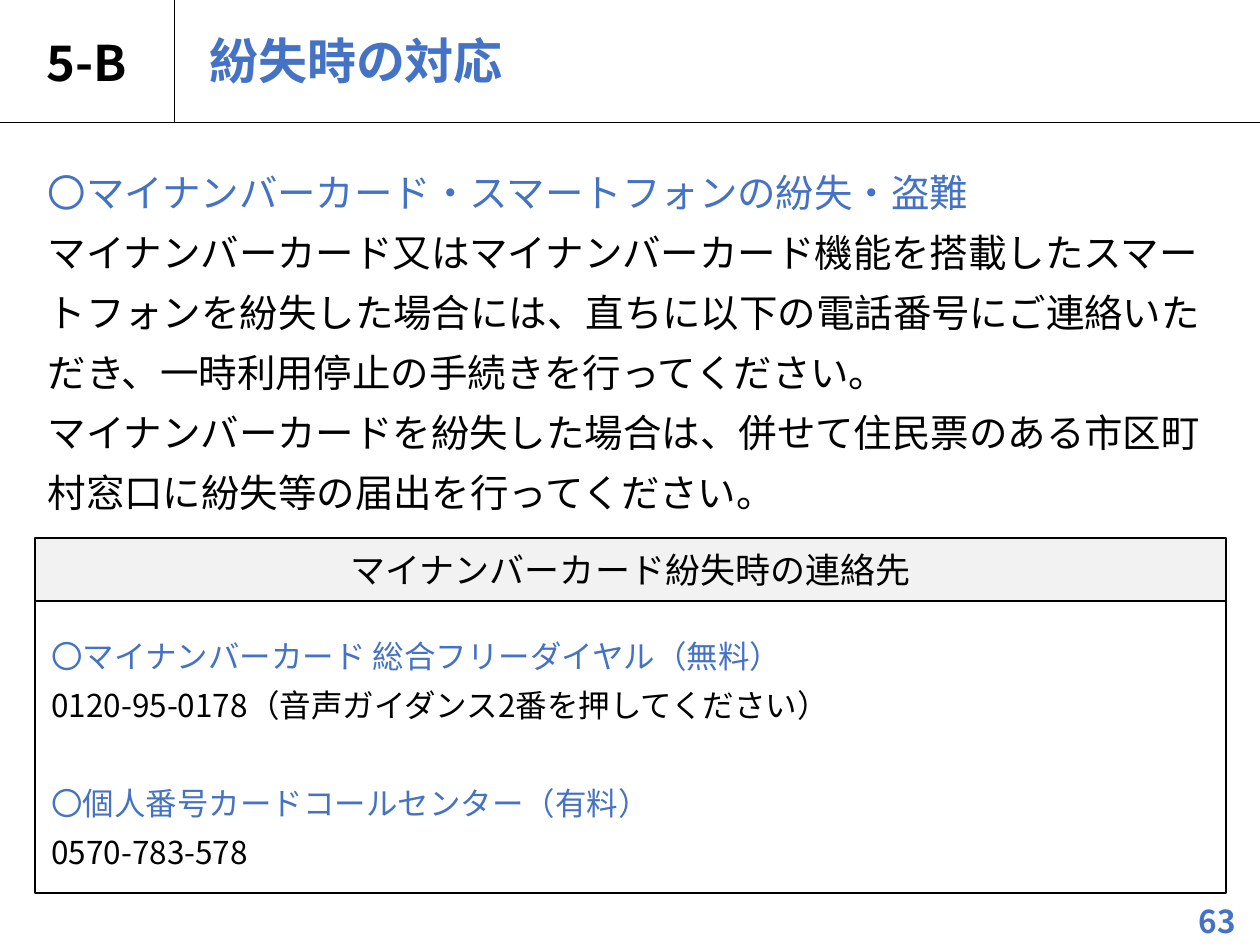
"""Build the slide on what to do when a card is lost."""
import pptx
import pptx.util
import pptx.dml.color
import pptx.enum.shapes
import pptx.enum.text
import pptx.oxml
import pptx.oxml.ns

PX = 914400 // 126
theme = {
    "font": "Noto Sans CJK JP",
    "ink": "000000", "blue": "4472C4", "grey": "F2F2F2",
    "title": 28, "body": 22, "head": 20, "note": 18,
    "thin": 0.5, "edge": 1,
}
Pt = pptx.util.Pt
RGB = pptx.dml.color.RGBColor.from_string
Kind = pptx.enum.shapes.MSO_SHAPE
Align = pptx.enum.text.PP_ALIGN
Middle = pptx.enum.text.MSO_ANCHOR.MIDDLE
qn = pptx.oxml.ns.qn


def place(shape, box):
    shape.left, shape.top, shape.width, shape.height = [n * PX for n in box]


def write(frame, lines, size, align=Align.LEFT, bold=False, pitch=None):
    frame.word_wrap = True
    frame.auto_size = pptx.enum.text.MSO_AUTO_SIZE.NONE
    frame.text = "\n".join(text for text, tint in lines)
    for para, (text, tint) in zip(frame.paragraphs, lines):
        props = para._p.get_or_add_pPr()
        props.set("marL", "0")
        props.set("indent", "0")
        props.append(pptx.oxml.parse_xml(
            '<a:buNone xmlns:a="%s"/>' % pptx.oxml.ns.nsdecls("a").split('"')[1]))
        para.alignment = align
        para.space_before = para.space_after = Pt(0)
        if pitch:
            para.line_spacing = Pt(pitch)
        for run in para.runs:
            font = run.font
            font.size, font.bold, font.name = Pt(size), bold, theme["font"]
            font.color.rgb = RGB(theme[tint])
            east = run._r.get_or_add_rPr().makeelement(
                qn("a:ea"), {"typeface": theme["font"]})
            run._r.rPr.find(qn("a:latin")).addnext(east)


deck = pptx.Presentation()
deck.slide_width, deck.slide_height = 1260 * PX, 945 * PX
slide = deck.slides.add_slide(deck.slide_layouts[1])
shapes = slide.shapes

for ends in [(-5, 122, 1260, 122), (174, 122, 174, 0)]:
    rule = shapes.add_connector(
        pptx.enum.shapes.MSO_CONNECTOR.STRAIGHT, *[n * PX for n in ends])
    rule.line.color.rgb = RGB(theme["ink"])
    rule.line.width = Pt(theme["thin"])
    rule._element.spPr.append(rule._element.makeelement(qn("a:effectLst"), {}))

code = shapes.title
place(code, (0, 0, 174, 123))
write(code.text_frame, [("5-B", "ink")], theme["title"], Align.CENTER, True)
code.text_frame.vertical_anchor = Middle

body = slide.placeholders[1]
place(body, (35, 149, 1191, 387))
write(body.text_frame, [
    ("〇マイナンバーカード・スマートフォンの紛失・盗難", "blue"),
    ("マイナンバーカード又はマイナンバーカード機能を搭載したスマートフォンを紛失した場合には、"
     "直ちに以下の電話番号にご連絡いただき、一時利用停止の手続きを行ってください。", "ink"),
    ("マイナンバーカードを紛失した場合は、併せて住民票のある市区町村窓口に"
     "紛失等の届出を行ってください。", "ink"),
], theme["body"], pitch=34.3)

panels = [
    (Kind.ROUNDED_RECTANGLE, (193, 20, 1032, 79), None, False,
     "紛失時の対応", "blue", "title", Align.LEFT, True),
    (Kind.RECTANGLE, (35, 538, 1191, 63), "grey", True,
     "マイナンバーカード紛失時の連絡先", "ink", "head", Align.CENTER, False),
    (Kind.RECTANGLE, (35, 601, 1191, 292), None, True,
     "", "ink", "note", Align.LEFT, False),
]
for kind, box, fill, edge, text, tint, size, align, bold in panels:
    panel = shapes.add_shape(kind, 0, 0, 0, 0)
    place(panel, box)
    panel.shadow.inherit = False
    if fill:
        panel.fill.solid()
        panel.fill.fore_color.rgb = RGB(theme[fill])
    else:
        panel.fill.background()
    if edge:
        panel.line.color.rgb = RGB(theme["ink"])
        panel.line.width = Pt(theme["edge"])
    else:
        panel.line.fill.background()
    if text:
        write(panel.text_frame, [(text, tint)], theme[size], align, bold)
        panel.text_frame.vertical_anchor = Middle

desk = shapes.add_textbox(0, 0, 0, 0)
place(desk, (39, 620, 1186, 262))
write(desk.text_frame, [
    ("〇マイナンバーカード 総合フリーダイヤル（無料）", "blue"),
    ("0120-95-0178（音声ガイダンス2番を押してください）", "ink"),
    ("〇個人番号カードコールセンター（有料）", "blue"),
    ("0570-783-578", "ink"),
], theme["note"], pitch=28)
desk.text_frame.paragraphs[2].space_before = Pt(28)

page = shapes.add_textbox(0, 0, 0, 0)
place(page, (1178, 896, 79, 49))
write(page.text_frame, [("63", "blue")], theme["note"], Align.CENTER, True)
page.text_frame.vertical_anchor = Middle

deck.save("out.pptx")
